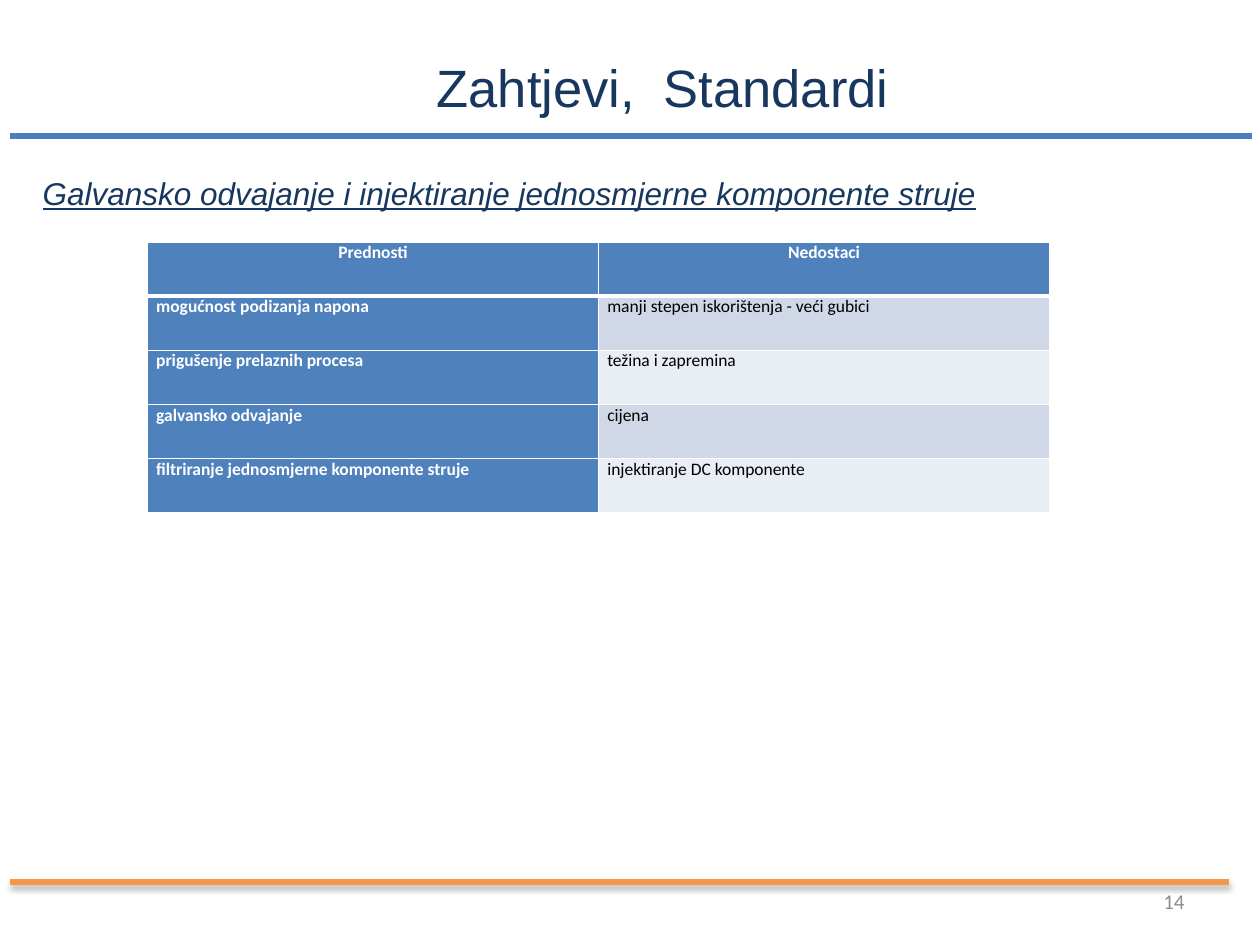
from lxml.etree import SubElement
from pptx import Presentation
from pptx.dml.color import RGBColor
from pptx.enum.shapes import MSO_CONNECTOR
from pptx.enum.text import MSO_ANCHOR, MSO_AUTO_SIZE, PP_ALIGN
from pptx.oxml.ns import qn
from pptx.util import Inches, Pt

COLORS = {
    "navy": "17375E", "rule": "4B7EBC", "orange": "F79646", "gray": "8C8C8C",
    "header": "4F81BD", "band_dark": "D0D8E8", "band_light": "E9EDF4",
    "white": "FFFFFF", "black": "000000",
}
WIDTH, HEIGHT = 10, 7.5

HEADINGS = [
    ("Zahtjevi,  Standardi", (3.35, 0.39, 3.82, 0.61), PP_ALIGN.CENTER,
     {"size": Pt(30), "name": "Arial"}),
    ("Galvansko odvajanje i injektiranje jednosmjerne komponente struje",
     (0.24, 1.33, 7.68, 0.4), PP_ALIGN.LEFT,
     {"size": Pt(18), "name": "Arial", "italic": True, "underline": True}),
]
PAGE_NUMBER = ("14", (7.17, 6.95, 2.33, 0.4), PP_ALIGN.RIGHT,
               {"size": Pt(12), "name": "Calibri"})
COMPARISON = [
    ("Prednosti", "Nedostaci"),
    ("mogućnost podizanja napona", "manji stepen iskorištenja - veći gubici"),
    ("prigušenje prelaznih procesa", "težina i zapremina"),
    ("galvansko odvajanje", "cijena"),
    ("filtriranje jednosmjerne komponente struje", "injektiranje DC komponente"),
]
TABLE_LEFT, TABLE_TOP, COLUMN_WIDTH, ROW_HEIGHT = 1.17, 1.92, 3.58, 0.43


def rgb(color):
    return RGBColor.from_string(COLORS[color])


def write(paragraph, text, align, color, font_values):
    paragraph.alignment = align
    run = paragraph.add_run()
    run.text = text
    for attribute, value in font_values.items():
        setattr(run.font, attribute, value)
    run.font.color.rgb = rgb(color)


def add_rule(slide, right, y, color):
    rule = slide.shapes.add_connector(
        MSO_CONNECTOR.STRAIGHT, *map(Inches, (0.08, y, right, y)))
    rule.line.color.rgb = rgb(color)
    rule.line.width = Pt(3)
    return SubElement(rule._element.spPr, qn("a:effectLst"))


def add_shadow(effects):
    shadow = SubElement(effects, qn("a:outerShdw"), blurRad=str(Pt(3.1)),
                        dist=str(Pt(1.8)), dir="5400000", rotWithShape="0")
    black = SubElement(shadow, qn("a:srgbClr"), val=COLORS["black"])
    SubElement(black, qn("a:alpha"), val="35000")


def add_label(slide, label, color, frame_values):
    text, place, align, font_values = label
    frame = slide.shapes.add_textbox(*map(Inches, place)).text_frame
    for attribute, value in frame_values.items():
        setattr(frame, attribute, value)
    write(frame.paragraphs[0], text, align, color, font_values)


def add_borders(cell, widths):
    properties = cell._tc.get_or_add_tcPr()
    for side, width in widths.items():
        border = SubElement(properties, qn(f"a:ln{side}"), w=str(Pt(width)))
        fill = SubElement(border, qn("a:solidFill"))
        SubElement(fill, qn("a:srgbClr"), val=COLORS["white"])


def add_comparison(slide):
    rows, columns = len(COMPARISON), len(COMPARISON[0])
    table = slide.shapes.add_table(
        rows, columns, *map(Inches, (TABLE_LEFT, TABLE_TOP,
                                     columns * COLUMN_WIDTH, rows * ROW_HEIGHT))).table
    for column in table.columns:
        column.width = Inches(COLUMN_WIDTH)
    for r, entries in enumerate(COMPARISON):
        table.rows[r].height = Inches(ROW_HEIGHT)
        for c, entry in enumerate(entries):
            cell = table.cell(r, c)
            strong = r == 0 or c == 0
            band = "band_dark" if r % 2 else "band_light"
            margins = {"margin_left": 0.07, "margin_right": 0.07,
                       "margin_top": 0, "margin_bottom": 0}
            for attribute, value in margins.items():
                setattr(cell, attribute, Inches(value))
            add_borders(cell, {"L": 1, "R": 1, "T": 3 if r == 1 else 1,
                               "B": 3 if r == 0 else 1})
            cell.fill.solid()
            cell.fill.fore_color.rgb = rgb("header" if strong else band)
            write(cell.text_frame.paragraphs[0], entry,
                  PP_ALIGN.LEFT if r else PP_ALIGN.CENTER,
                  "white" if strong else "black",
                  {"size": Pt(10), "name": "Calibri", "bold": strong})


def main():
    deck = Presentation()
    deck.slide_width, deck.slide_height = Inches(WIDTH), Inches(HEIGHT)
    slide = deck.slides.add_slide(deck.slide_layouts[6])
    add_rule(slide, 9.94, 1.08, "rule")
    add_shadow(add_rule(slide, 9.75, 7, "orange"))
    add_label(slide, PAGE_NUMBER, "gray",
              {"word_wrap": True, "vertical_anchor": MSO_ANCHOR.MIDDLE})
    for heading in HEADINGS:
        add_label(slide, heading, "navy",
                  {"word_wrap": False, "auto_size": MSO_AUTO_SIZE.SHAPE_TO_FIT_TEXT})
    add_comparison(slide)
    deck.save("out.pptx")


if __name__ == "__main__":
    main()
